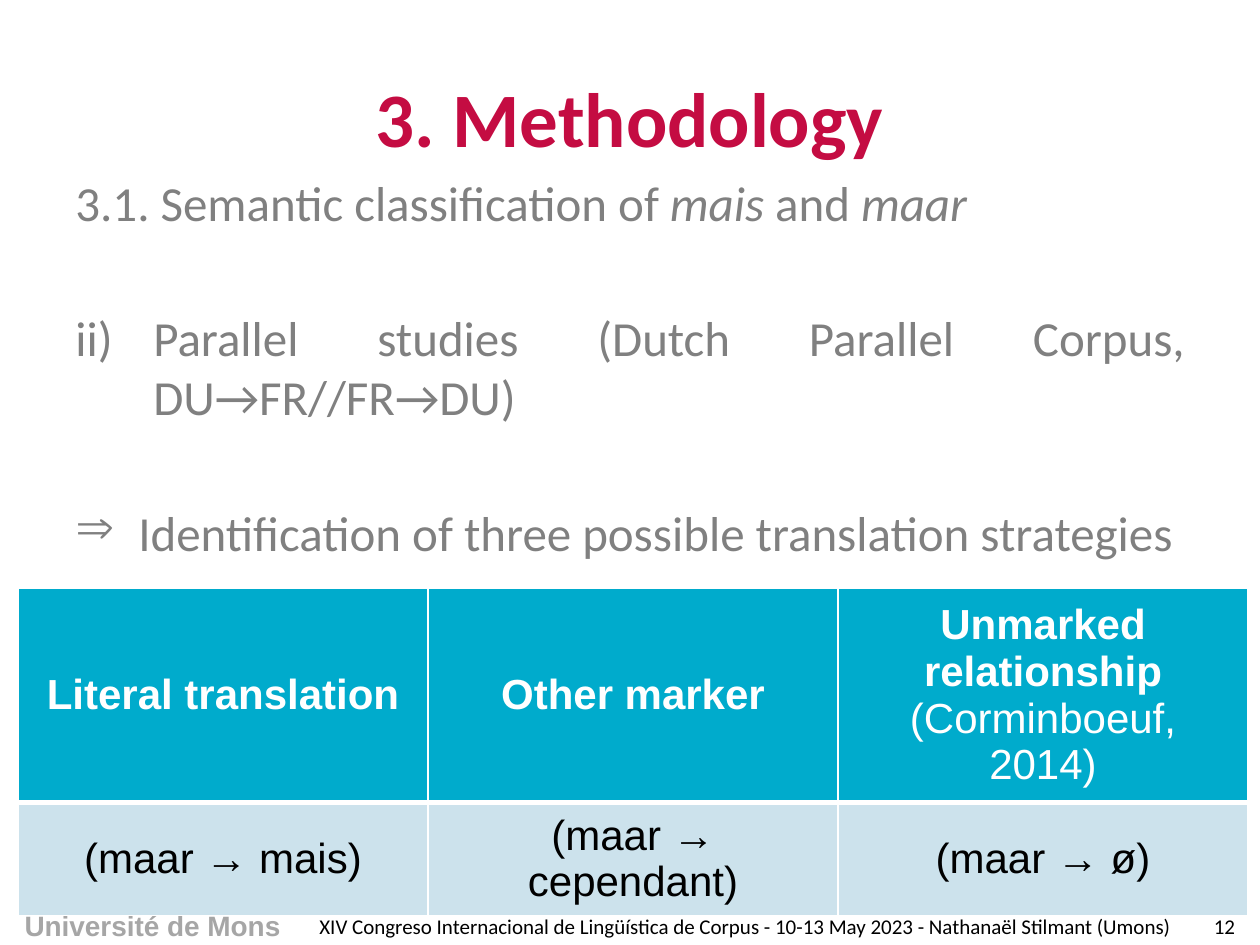
"""Build the methodology slide with its translation strategy table."""
from lxml.etree import SubElement, Element
from pptx import Presentation
from pptx.dml.color import RGBColor
from pptx.enum.text import MSO_ANCHOR as ANCHOR, PP_ALIGN as ALIGN
from pptx.oxml.ns import qn
from pptx.util import Pt

PX = 914400 / 126
CRIMSON = RGBColor(0xC4, 0x0C, 0x42)
GREY = RGBColor(0x80, 0x80, 0x80)
SILVER = RGBColor(0xA6, 0xA6, 0xA6)
CYAN = RGBColor(0x00, 0xAB, 0xCC)
PALE = RGBColor(0xCC, 0xE2, 0xEC)
WHITE = RGBColor(0xFF, 0xFF, 0xFF)
BLACK = RGBColor(0, 0, 0)

TITLE = "3. Methodology"
UNIVERSITY = "Université de Mons"
FOOTER = "XIV Congreso Internacional de Lingüística de Corpus - 10-13 May 2023 - Nathanaël Stilmant (Umons)"
PAGE = "12"
ROMAN = ("buAutoNum", {"type": "romanLcParenR", "startAt": "2"})
ARROW = ("buChar", {"char": "⇒"})
BODY = [
    ([("3.1. Semantic classification of ", ""), ("mais", "i"), (" and ", ""), ("maar", "i")], None, 0),
    ([("Parallel studies (Dutch Parallel Corpus, DU→FR//FR→DU)", "")], ROMAN, 78),
    ([("Identification of three possible translation strategies", "")], ARROW, 63),
]
TABLE = [
    [[("Literal translation", "b")], [("Other marker", "b")],
     [("Unmarked relationship ", "b"), ("(Corminboeuf, 2014)", "")]],
    [[("(maar → mais)", "")], [("(maar → cependant)", "")], [("(maar → ø)", "")]],
]
ROWS = [(198, CYAN, WHITE, 3), (106, PALE, BLACK, 1)]
COL_W = 410


def px(n):
    return round(n * PX)


def write(p, text, size=12, font="Calibri", color=BLACK, bold=False, align=ALIGN.CENTER):
    p.alignment = align
    for part, style in [(text, "")] if isinstance(text, str) else text:
        r = p.add_run()
        r.text = part
        f = r.font
        f.size, f.name, f.color.rgb = Pt(size), font, color
        f.bold, f.italic = bold or style == "b", style == "i"


def add_box(s, x, y, w, h, anchor=ANCHOR.MIDDLE):
    tf = s.shapes.add_textbox(px(x), px(y), px(w), px(h)).text_frame
    tf.word_wrap = True
    tf.vertical_anchor = anchor
    return tf


def add_bullet(p, bullet, indent):
    tag, attrs = bullet
    pPr = p._p.get_or_add_pPr()
    pPr.set("marL", str(px(indent)))
    pPr.set("indent", str(-px(indent)))
    if bullet is ARROW:
        SubElement(pPr, qn("a:buFont"), typeface="Symbol")
    SubElement(pPr, qn("a:" + tag), **attrs)


def add_borders(cell, bottom):
    tcPr = cell._tc.get_or_add_tcPr()
    for i, side in enumerate("LRTB"):
        width = bottom if side == "B" else 1
        ln = Element(qn("a:ln" + side), w=str(Pt(width)))
        SubElement(SubElement(ln, qn("a:solidFill")), qn("a:srgbClr"), val=str(WHITE))
        tcPr.insert(i, ln)


def add_strategy_table(s):
    cols = len(TABLE[0])
    height = sum(row[0] for row in ROWS)
    table = s.shapes.add_table(len(ROWS), cols, px(18), px(588), px(COL_W * cols), px(height)).table
    for i, (h, fill, color, bottom) in enumerate(ROWS):
        table.rows[i].height = px(h)
        for j, text in enumerate(TABLE[i]):
            cell = table.cell(i, j)
            cell.fill.solid()
            cell.fill.fore_color.rgb = fill
            cell.vertical_anchor = ANCHOR.MIDDLE
            add_borders(cell, bottom)
            write(cell.text_frame.paragraphs[0], text, size=24, font="Arial", color=color)


def main():
    prs = Presentation()
    prs.slide_width, prs.slide_height = px(1260), px(945)
    s = prs.slides.add_slide(prs.slide_layouts[6])

    tf = add_box(s, -1, 902, 307, 47, ANCHOR.TOP)
    write(tf.paragraphs[0], UNIVERSITY, size=16, font="Arial", color=SILVER, bold=True)

    tf = add_box(s, 63, 166, 1134, 716, ANCHOR.TOP)
    for i, (text, bullet, indent) in enumerate(BODY):
        p = tf.add_paragraph() if i else tf.paragraphs[0]
        if bullet:
            p.space_before = Pt(44)
            add_bullet(p, bullet, indent)
        write(p, text, size=28, color=GREY, align=ALIGN.JUSTIFY)

    tf = add_box(s, 63, 38, 1134, 158)
    write(tf.paragraphs[0], TITLE, size=44, color=CRIMSON, bold=True)
    write(add_box(s, 1189, 907, 71, 38).paragraphs[0], PAGE)
    write(add_box(s, 307, 907, 882, 38).paragraphs[0], FOOTER, align=ALIGN.LEFT)
    add_strategy_table(s)
    prs.save("out.pptx")


if __name__ == "__main__":
    main()
